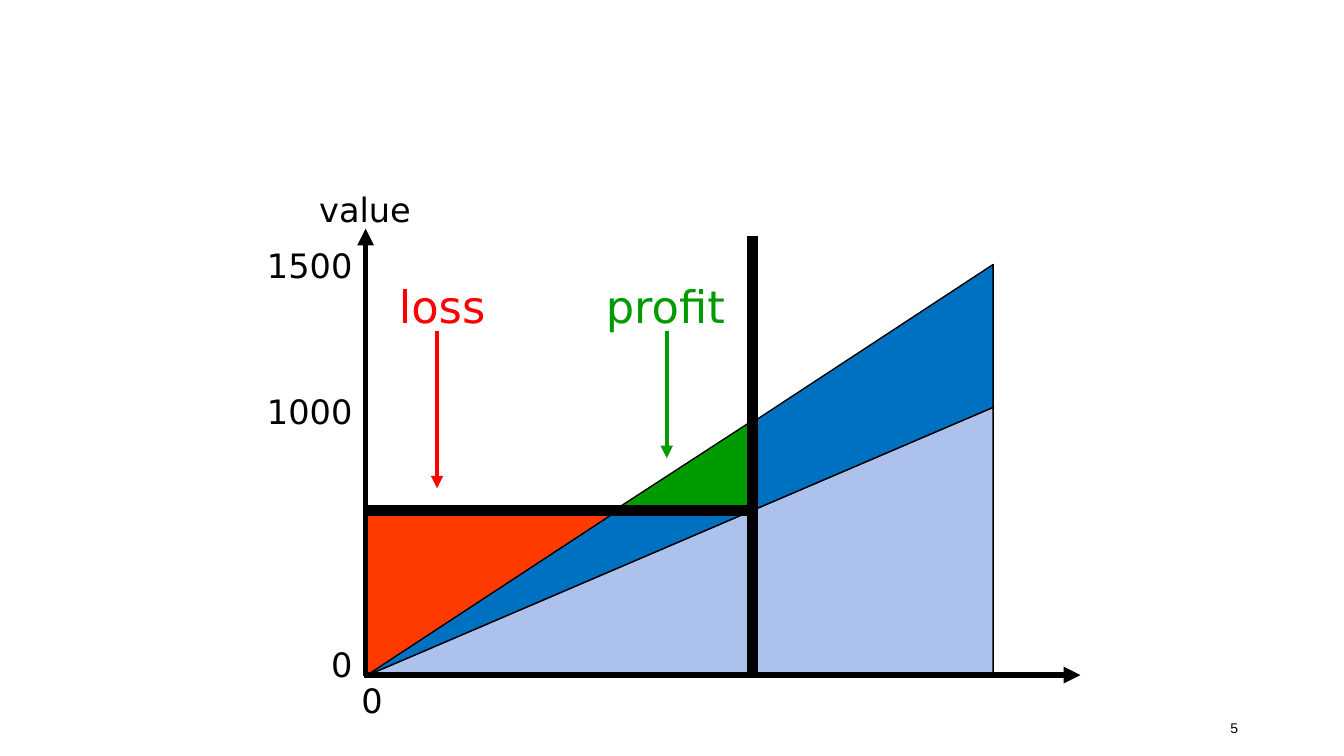
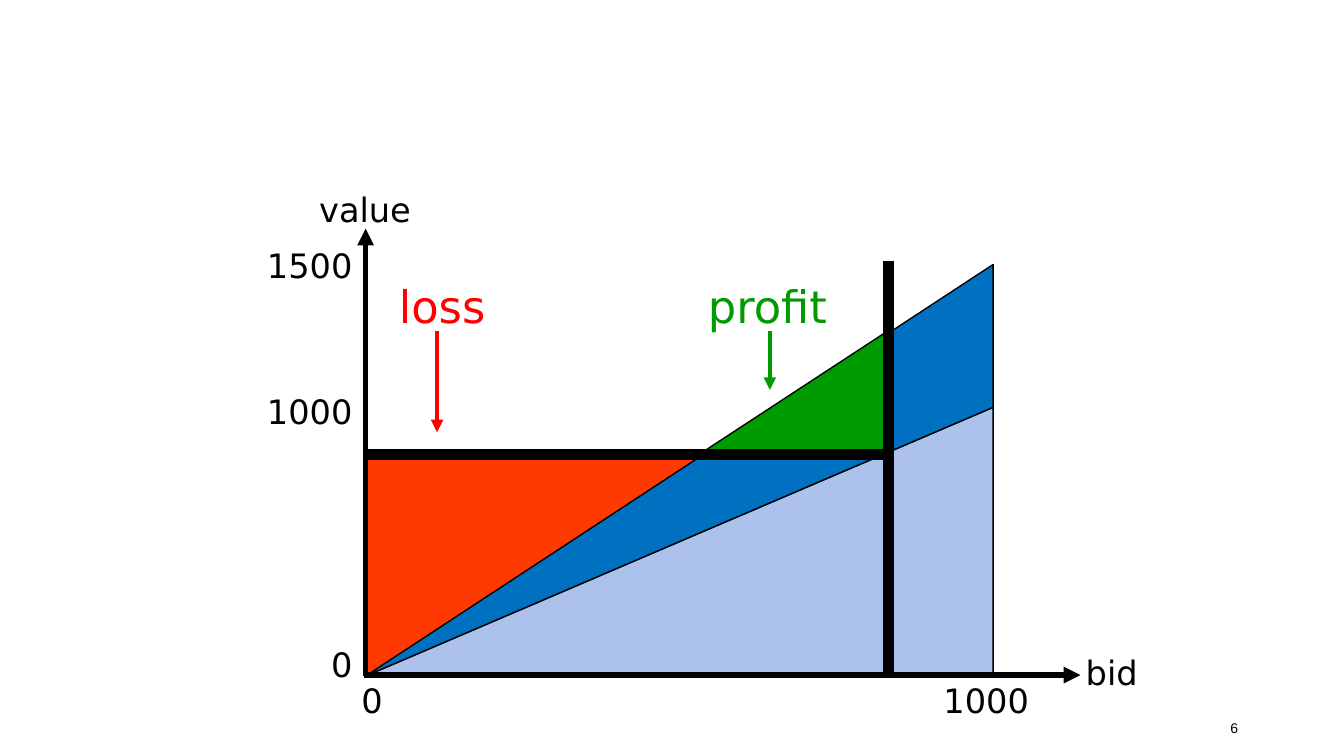
from lxml import etree
from pptx import Presentation
from pptx.dml.color import RGBColor
from pptx.enum.shapes import MSO_CONNECTOR as Connector, MSO_SHAPE as Shape
from pptx.enum.text import MSO_ANCHOR as Anchor, PP_ALIGN as Align
from pptx.oxml.ns import qn
from pptx.util import Cm, Pt

COLORS = {
    "ink": "000000",
    "loss": "FF0000",
    "loss_area": "FF3A01",
    "profit": "009B00",
    "below_bid": "ACC1EC",
    "above_bid": "0070C0",
}
ORIGIN_X, ORIGIN_Y = 6.91, 12.78
MAX_BID_X = 18.77
VALUE_1000_Y, VALUE_1500_Y = 7.7, 5.0
BASE_Y = 12.76
ARROW_TOP = 6.25
STEEP_RUN = 1.53  # horizontal run per unit of rise on the upper edge


def add_text(slide, text, left, top, width, height=1.02, size=18, color="ink",
             font="DejaVu Sans", align=Align.LEFT, anchor=Anchor.TOP, margin_top=0.13):
    frame = slide.shapes.add_textbox(Cm(left), Cm(top), Cm(width), Cm(height)).text_frame
    frame.word_wrap = True
    frame.vertical_anchor = anchor
    frame.margin_top = Cm(margin_top)
    paragraph = frame.paragraphs[0]
    paragraph.alignment = align
    run = paragraph.add_run()
    run.text = text
    run.font.size = Pt(size)
    run.font.name = font
    run.font.color.rgb = RGBColor.from_string(COLORS[color])


def add_line(slide, start, end, width, color="ink", arrow=False):
    line = slide.shapes.add_connector(
        Connector.STRAIGHT, *(Cm(length) for length in (*start, *end)))
    line.line.width = Pt(width)
    line.line.color.rgb = RGBColor.from_string(COLORS[color])
    if arrow:
        etree.SubElement(line.line._get_or_add_ln(), qn("a:tailEnd"), type="triangle")
    etree.SubElement(line._element.spPr, qn("a:effectLst"))


prs = Presentation()
prs.slide_width, prs.slide_height = Cm(25.4), Cm(14.29)

bids = [
    {"number": "5", "bid_x": 14.22, "bid_top": 4.47, "bid_y": 9.65,
     "profit_area": (11.73, 7.92, 2.54, 1.65),
     "profit_left": 11.2, "profit_arrow": (12.6, 8.66), "bid_labels": False},
    {"number": "6", "bid_x": 16.79, "bid_top": 4.93, "bid_y": 8.59,
     "profit_area": (13.23, 6.27, 3.53, 2.31),
     "profit_left": 13.13, "profit_arrow": (14.55, 7.37), "bid_labels": True},
]
wedges = [
    ("below_bid", [(MAX_BID_X, VALUE_1000_Y), (MAX_BID_X, ORIGIN_Y)], False),
    ("above_bid", [(MAX_BID_X, VALUE_1000_Y), (MAX_BID_X, VALUE_1500_Y)], True),
]

for bid in bids:
    slide = prs.slides.add_slide(prs.slide_layouts[6])
    bid_x, bid_y = bid["bid_x"], bid["bid_y"]

    add_text(slide, bid["number"], 17.93, 13.23, 5.72, 0.76, size=7.5, font="Arial",
             align=Align.RIGHT, anchor=Anchor.MIDDLE, margin_top=0.43)

    # Shaded areas: loss at the back, then the wedges, profit in front
    loss_height = BASE_Y - bid_y
    loss_box = (6.93, bid_y, loss_height * STEEP_RUN, loss_height)
    loss_area, profit_area = (
        slide.shapes.add_shape(Shape.RIGHT_TRIANGLE, *(Cm(length) for length in box))
        for box in (loss_box, bid["profit_area"]))
    loss_area._element.spPr.xfrm.set("flipV", "1")
    profit_area._element.spPr.xfrm.set("flipH", "1")

    areas = [(loss_area, "loss_area"), (profit_area, "profit")]
    for color, corners, closed in wedges:
        outline = slide.shapes.build_freeform(Cm(ORIGIN_X), Cm(ORIGIN_Y))
        outline.add_line_segments([(Cm(x), Cm(y)) for x, y in corners], close=closed)
        wedge = outline.convert_to_shape()
        profit_area._element.addprevious(wedge._element)
        areas.append((wedge, color))

    for area, color in areas:
        area.shadow.inherit = False
        area.fill.solid()
        area.fill.fore_color.rgb = RGBColor.from_string(COLORS[color])
        if color == "loss_area":
            area.line.fill.background()
        else:
            area.line.width = Pt(0.75)
            area.line.color.rgb = RGBColor.from_string(COLORS["ink"])

    # Axes and their labels
    add_line(slide, (ORIGIN_X, ORIGIN_Y), (ORIGIN_X, 4.32), 3, arrow=True)
    add_line(slide, (6.88, BASE_Y), (20.42, BASE_Y), 3, arrow=True)
    for value, top in (("1500", 4.5), ("1000", 7.26), ("0", 12.04)):
        add_text(slide, value, 4.72, top, 2.19, align=Align.RIGHT)
    add_text(slide, "value", 5.31, 3.45, 3.18, align=Align.CENTER)
    add_text(slide, "0", 6.58, 12.73, 1.75)
    if bid["bid_labels"]:
        add_text(slide, "1000", 17.58, 12.73, 2.67)
        add_text(slide, "bid", 20.27, 12.19, 1.73, 1.22)

    # The bid
    add_line(slide, (bid_x, 12.74), (bid_x, bid["bid_top"]), 6)
    add_line(slide, (bid_x, bid_y), (6.86, bid_y), 6)

    # Loss and profit
    for outcome, left, width, arrow_x, arrow_end in (
            ("loss", 7.29, 2.24, 8.26, bid_y - 0.42),
            ("profit", bid["profit_left"], 3, *bid["profit_arrow"])):
        add_text(slide, outcome, left, 5.13, width, 1.27, size=24, color=outcome)
        add_line(slide, (arrow_x, ARROW_TOP), (arrow_x, arrow_end), 2.25, outcome, arrow=True)

prs.save("out.pptx")
